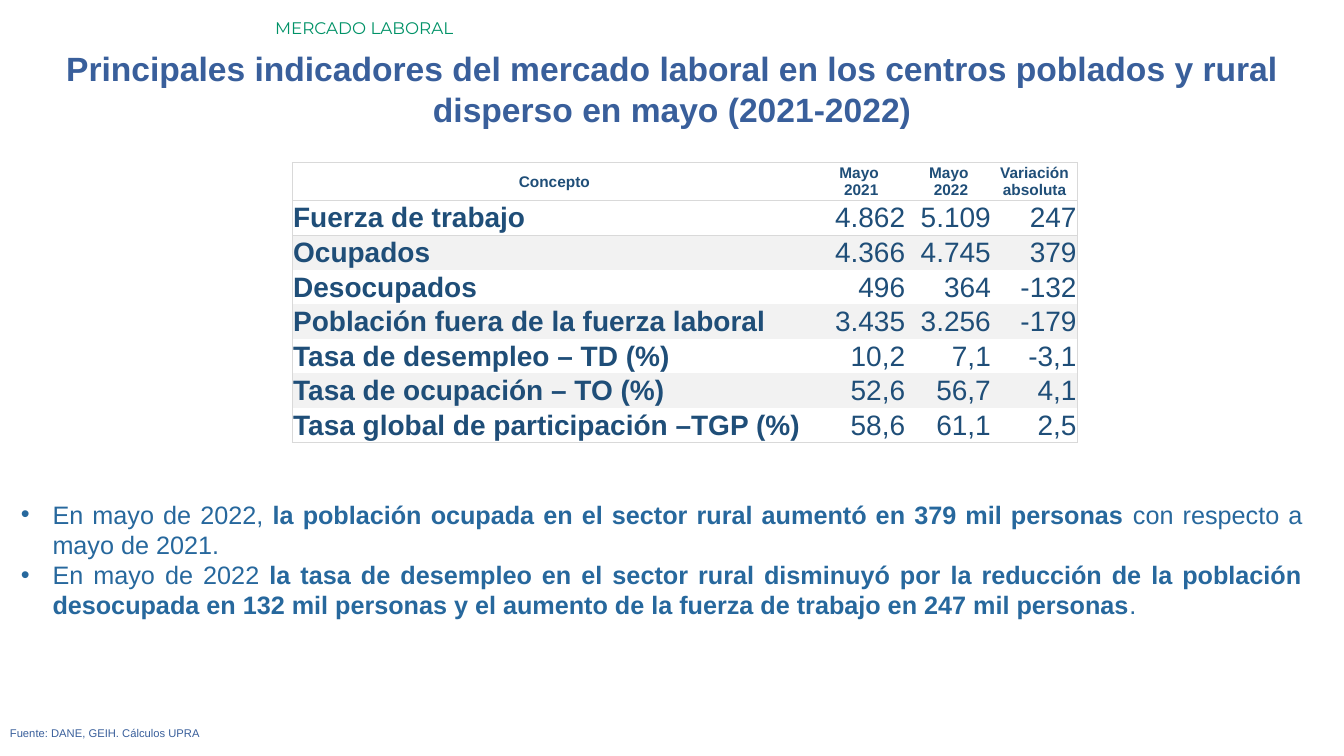
import pptx
import pptx.util
import pptx.dml.color
import pptx.enum.text
import pptx.oxml
import pptx.oxml.ns

Pt = pptx.util.Pt
ALIGN = pptx.enum.text.PP_ALIGN

# Content
COLOURS = {
    "section": "009267", "heading": "395F9B", "findings": "27689D",
    "table": "1F4E78", "border": "D9D9D9", "band": "F2F2F2", "plain": "FFFFFF",
}
SECTION = "MERCADO LABORAL"
HEADING = ("Principales indicadores del mercado laboral en los centros poblados "
           "y rural disperso en mayo (2021-2022)")
SOURCE = "Fuente: DANE, GEIH. Cálculos UPRA"
# Each finding is a list of (text, bold) parts
FINDINGS = [
    [("En mayo de 2022, ", False),
     ("la población ocupada en el sector rural aumentó en 379 mil personas ", True),
     ("con respecto a mayo de 2021.", False)],
    [("En mayo de 2022", False),
     (" la tasa de desempleo en el sector rural disminuyó por la reducción de la "
      "población desocupada en 132 mil personas y el aumento de la fuerza de "
      "trabajo en 247 mil personas", True),
     (".", False)],
]
INDICATORS = [
    ("Concepto", "Mayo \n2021", "Mayo\n 2022", "Variación absoluta"),
    ("Fuerza de trabajo", "4.862", "5.109", "247"),
    ("Ocupados", "4.366", "4.745", "379"),
    ("Desocupados", "496", "364", "-132"),
    ("Población fuera de la fuerza laboral", "3.435", "3.256", "-179"),
    ("Tasa de desempleo – TD (%)", "10,2", "7,1", "-3,1"),
    ("Tasa de ocupación – TO (%)", "52,6", "56,7", "4,1"),
    ("Tasa global de participación –TGP (%)", "58,6", "61,1", "2,5"),
]
COLUMN_WIDTHS = [374.4, 64, 61.2, 61.2]
HEADER_HEIGHT, ROW_HEIGHT = 27.1, 24.7


def set_font(paragraph, size, colour, bold=False, name="Arial"):
    font = paragraph.font
    font.name, font.size = name, Pt(size)
    font.color.rgb = pptx.dml.color.RGBColor.from_string(COLOURS[colour])
    if bold is not None:
        font.bold = bold


def add_text_frame(left, top, width, height):
    box = slide.shapes.add_textbox(Pt(left), Pt(top), Pt(width), Pt(height))
    frame = box.text_frame
    frame.word_wrap = True
    frame.auto_size = pptx.enum.text.MSO_AUTO_SIZE.SHAPE_TO_FIT_TEXT
    return frame


def add_line(box, text, align, *font):
    paragraph = add_text_frame(*box).paragraphs[0]
    paragraph.text, paragraph.alignment = text, align
    set_font(paragraph, *font)


def set_borders(cell, drawn):
    """Draw the named edges (L, R, T, B) and clear the others."""
    for edge in "LRTB":
        line = pptx.oxml.ns.qn(f"a:ln{edge}")
        border = cell._tc.get_or_add_tcPr().makeelement(line, {"w": str(Pt(0.5))})
        if edge in drawn:
            fill = (f'<a:solidFill {pptx.oxml.ns.nsdecls("a")}>'
                    f'<a:srgbClr val="{COLOURS["border"]}"/></a:solidFill>')
        else:
            fill = f'<a:noFill {pptx.oxml.ns.nsdecls("a")}/>'
        border.append(pptx.oxml.parse_xml(fill))
        cell._tc.get_or_add_tcPr().append(border)


deck = pptx.Presentation()
deck.slide_width, deck.slide_height = Pt(960), Pt(540)
slide = deck.slides.add_slide(deck.slide_layouts[6])

# Section label, heading and source line
add_line((189.4, 9.4, 770, 21.8), SECTION, ALIGN.LEFT, 12, "section", False, "Montserrat")
add_line((0, 31, 960, 65.4), HEADING, ALIGN.CENTER, 24, "heading", True)
add_line((0, 515.5, 929.5, 17), SOURCE, ALIGN.JUSTIFY, 8, "heading")

# Findings
findings_frame = add_text_frame(7.9, 352.8, 929.5, 94.5)
for index, finding in enumerate(FINDINGS):
    paragraph = findings_frame.add_paragraph() if index else findings_frame.paragraphs[0]
    paragraph.alignment = ALIGN.JUSTIFY
    properties = paragraph._p.get_or_add_pPr()
    properties.set("marL", str(Pt(22.5)))
    properties.set("indent", str(Pt(-22.5)))
    for bullet in ('buFont {} typeface="Arial"', 'buChar {} char="•"'):
        namespace = pptx.oxml.ns.nsdecls("a")
        properties.append(pptx.oxml.parse_xml(f"<a:{bullet.format(namespace)}/>"))
    set_font(paragraph, 18, "findings", None)
    for text, bold in finding:
        part = paragraph.add_run()
        part.text, part.font.bold = text, bold

# Indicator table
last_row, last_column = len(INDICATORS) - 1, len(COLUMN_WIDTHS) - 1
table = slide.shapes.add_table(
    len(INDICATORS), len(COLUMN_WIDTHS), Pt(208.8), Pt(116.1),
    Pt(sum(COLUMN_WIDTHS)), Pt(HEADER_HEIGHT + last_row * ROW_HEIGHT)).table
table.first_row = table.horz_banding = False
for column, width in zip(table.columns, COLUMN_WIDTHS):
    column.width = Pt(width)

for r, indicator in enumerate(INDICATORS):
    table.rows[r].height = Pt(ROW_HEIGHT if r else HEADER_HEIGHT)
    for c, value in enumerate(indicator):
        cell = table.cell(r, c)
        cell.margin_left = cell.margin_right = cell.margin_top = Pt(0.6)
        cell.margin_bottom = 0
        cell.vertical_anchor = pptx.enum.text.MSO_ANCHOR.MIDDLE
        edges = {"L": c == 0, "R": c == last_column,
                 "T": r <= 2, "B": r <= 1 or r == last_row}
        set_borders(cell, [edge for edge, drawn in edges.items() if drawn])
        cell.fill.solid()
        shade = "band" if r and r % 2 == 0 else "plain"
        cell.fill.fore_color.rgb = pptx.dml.color.RGBColor.from_string(COLOURS[shade])
        cell.text = value
        for paragraph in cell.text_frame.paragraphs:
            if r == 0:
                paragraph.alignment = ALIGN.CENTER
            else:
                paragraph.alignment = ALIGN.RIGHT if c else ALIGN.LEFT
            set_font(paragraph, 20 if r else 11, "table", r == 0 or c == 0)

deck.save("out.pptx")
